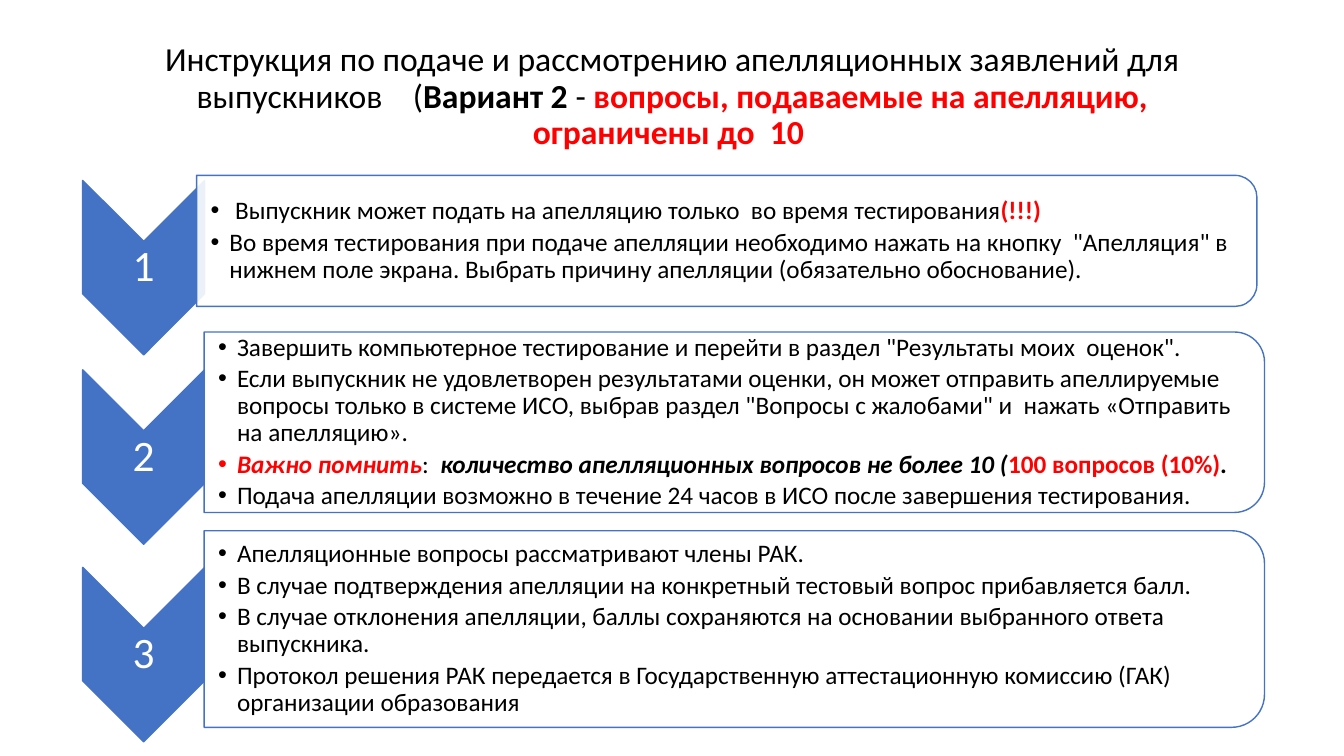
from lxml import etree
from pptx import Presentation
from pptx import util as u
from pptx.dml.color import RGBColor
from pptx.enum import shapes, text
from pptx.oxml import ns

HUES = {"ink": "000000", "red": "FF0000", "blue": "4472C4", "white": "FFFFFF"}

TITLE = [
    ("Инструкция по подаче и рассмотрению апелляционных заявлений для выпускников    (", ""),
    ("Вариант 2 ", "b"),
    ("- ", ""),
    ("вопросы, подаваемые на апелляцию, ограничены до  10 ", "br"),
]

# Each step: chevron middle, panel left, panel middle, panel height, paragraphs.
# Run marks: b bold, i italic, r red.
STEPS = [
    (191.2, 140.4, 172.1, 93.6, [
        [(" Выпускник может подать на апелляцию только  во время тестирования", ""),
         ("(!!!)", "br")],
        [("Во время тестирования при подаче апелляции необходимо нажать на кнопку  "
          "\"Апелляция\" в нижнем поле экрана. Выбрать причину апелляции "
          "(обязательно обоснование).", "")],
    ]),
    (326.5, 145.8, 301.6, 128.9, [
        [("Завершить компьютерное тестирование и перейти в раздел "
          "\"Результаты моих  оценок\".", "")],
        [("Если выпускник не удовлетворен результатами оценки, он может отправить "
          "апеллируемые вопросы только в системе ИСО, выбрав раздел "
          "\"Вопросы с жалобами\" и  нажать «Отправить на апелляцию».", "")],
        [("Важно помнить", "bir"), (": ", ""),
         (" количество апелляционных вопросов не более 10 (", "bi"),
         ("100 вопросов (10%)", "br"), (".", "bi")],
        [("Подача апелляции возможно в течение 24 часов в ИСО "
          "после завершения тестирования.", "")],
    ]),
    (467.6, 145.8, 449.3, 140.4, [
        [("Апелляционные вопросы рассматривают члены РАК.", "")],
        [("В случае подтверждения апелляции на конкретный тестовый вопрос "
          "прибавляется балл.", "")],
        [("В случае отклонения апелляции, баллы сохраняются на основании "
          "выбранного ответа выпускника.", "")],
        [("Протокол решения РАК передается в Государственную аттестационную "
          "комиссию (ГАК) организации образования", "")],
    ]),
]
ARROW_X, ARROW_W, ARROW_H = 102.6, 87.1, 124.6
PANEL_W = 757.4


class Deck:
    def __init__(self, slide, font="Calibri"):
        self.slide = slide
        self.font = font

    def place(self, shape, x, y, w, h):
        shape.left, shape.top = u.Pt(x), u.Pt(y)
        shape.width, shape.height = u.Pt(w), u.Pt(h)

    def frame(self, shape, left, right, edge):
        """Set wrapping, middle anchor and insets; return the text frame."""
        tf = shape.text_frame
        tf.word_wrap = True
        tf.auto_size = text.MSO_AUTO_SIZE.NONE
        tf.vertical_anchor = text.MSO_ANCHOR.MIDDLE
        tf.margin_left, tf.margin_right = u.Pt(left), u.Pt(right)
        tf.margin_top = tf.margin_bottom = u.Pt(edge)
        return tf

    def words(self, para, runs, size, hue="ink", align=text.PP_ALIGN.CENTER):
        para.alignment = align
        para.line_spacing = 0.9
        para.space_before = u.Pt(0)
        for part, marks in runs:
            run = para.add_run()
            run.text = part
            font = run.font
            font.name, font.size = self.font, u.Pt(size)
            font.bold, font.italic = "b" in marks, "i" in marks
            font.color.rgb = RGBColor.from_string(HUES["red" if "r" in marks else hue])

    def title(self, runs):
        shape = self.slide.shapes.title
        self.place(shape, 80.6, 32.4, 799.2, 74.2)
        self.words(self.frame(shape, 7.2, 7.2, 3.6).paragraphs[0], runs, 24)

    def turned(self, kind, mid_x, mid_y, w, h, fill):
        """Add a shape turned by 90 degrees that looks w wide and h high."""
        shape = self.slide.shapes.add_shape(
            kind, u.Pt(mid_x - h / 2), u.Pt(mid_y - w / 2), u.Pt(h), u.Pt(w))
        shape.rotation = 90
        shape.shadow.inherit = False
        shape.fill.solid()
        shape.fill.fore_color.rgb = RGBColor.from_string(HUES[fill])
        shape.line.color.rgb = RGBColor.from_string(HUES["blue"])
        shape.line.width = u.Pt(1)
        return shape

    def arrow(self, num, mid):
        self.turned(shapes.MSO_SHAPE.CHEVRON, ARROW_X, mid, ARROW_W, ARROW_H, "blue")
        box = self.slide.shapes.add_textbox(0, 0, 0, 0)
        self.place(box, ARROW_X - ARROW_W / 2, mid - 18.7, ARROW_W, 37.4)
        para = self.frame(box, 1.4, 1.4, 1.4).paragraphs[0]
        self.words(para, [(str(num), "")], 31, "white")

    def panel(self, left, mid, h):
        shape = self.turned(shapes.MSO_SHAPE.ROUND_2_SAME_RECTANGLE,
                            left + PANEL_W / 2, mid, PANEL_W, h, "white")
        color = shape._element.spPr.find(ns.qn("a:solidFill")).find(ns.qn("a:srgbClr"))
        etree.SubElement(color, ns.qn("a:alpha"), val="90000")

    def items(self, holder, left, mid, h, paras):
        inset = 0.05 * h
        self.place(holder, left, mid - h / 2 + inset, PANEL_W - inset, h - 2 * inset)
        self.slide.shapes._spTree.append(holder._element)  # in front of its panel
        tf = self.frame(holder, 10, 0.7, 0.7)
        for n, runs in enumerate(paras):
            para = tf.add_paragraph() if n else tf.paragraphs[0]
            self.words(para, runs, 18, align=text.PP_ALIGN.LEFT)
            para.space_after = u.Pt(3)
            props = para._p.get_or_add_pPr()
            props.set("marL", str(u.Pt(13.5)))
            props.set("indent", str(-u.Pt(13.5)))
            etree.SubElement(props, ns.qn("a:buFont"), typeface="Arial")
            etree.SubElement(props, ns.qn("a:buChar"), char="•")


def main():
    prs = Presentation()
    prs.slide_width, prs.slide_height = u.Pt(960), u.Pt(540)
    slide = prs.slides.add_slide(prs.slide_layouts.get_by_name("Comparison"))
    deck = Deck(slide)
    deck.title(TITLE)
    *lists, spare = list(slide.placeholders)[1:]
    spare._element.getparent().remove(spare._element)
    for num, (step, holder) in enumerate(zip(STEPS, lists), 1):
        tip, left, mid, h, paras = step
        deck.arrow(num, tip)
        deck.panel(left, mid, h)
        deck.items(holder, left, mid, h, paras)
    prs.save("out.pptx")


if __name__ == "__main__":
    main()
